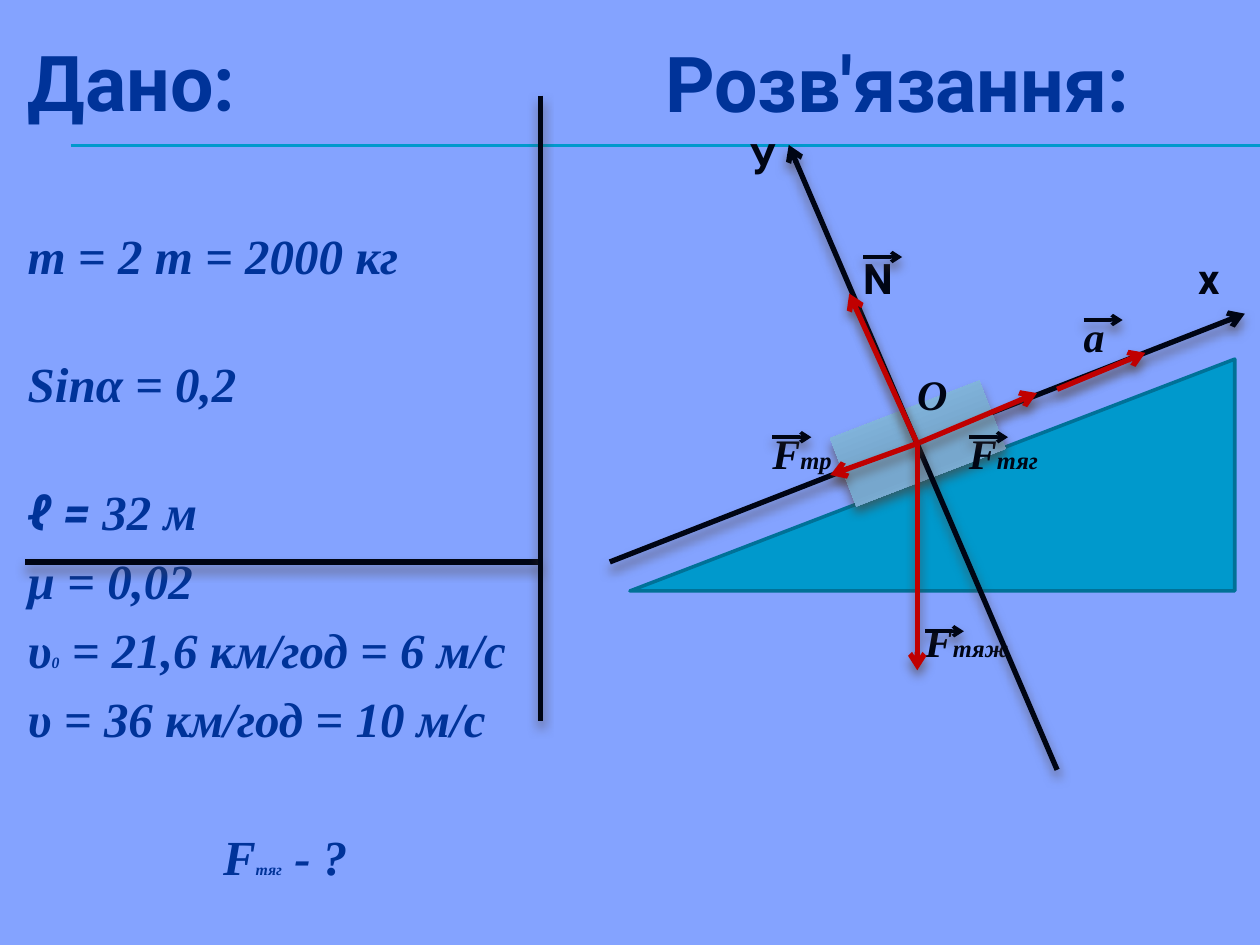
import dataclasses

import lxml.etree
import pptx
import pptx.dml.color
import pptx.enum.shapes
import pptx.oxml
import pptx.oxml.ns
import pptx.util

SHAPE = pptx.enum.shapes.MSO_SHAPE
qn = pptx.oxml.ns.qn


@dataclasses.dataclass(frozen=True)
class Theme:
    """Colours, fonts and type sizes."""
    back: str = "84A3FF"
    ink: str = "000514"
    text: str = "003399"
    teal: str = "0099CC"
    edge: str = "007197"
    force: str = "C00000"
    shade: str = "4E3B30"
    block: tuple = ((0, "A0CDF1"), (25, "82B5DD"), (50, "77A7CD"),
                    (65, "77A7CD"), (80, "81B4DC"), (100, "99C6EB"))
    sans: str = "Roboto"
    serif: str = "Times New Roman"
    title: int = 44
    body: int = 28
    label: int = 24
    sub: int = 14
    tiny: int = 9


@dataclasses.dataclass(frozen=True)
class Box:
    """A region on a grid of 100 columns and 75 rows."""
    x: float
    y: float
    w: float
    h: float

    def at(self, x, y):
        """Return slide lengths for a cell of this region."""
        return cell(self.x + x), cell(self.y + y)


T = Theme()


def cell(n):
    """Turn grid cells into a length."""
    return pptx.util.Inches(n / 10)


def rgb(code):
    """Turn a hex code into a colour."""
    return pptx.dml.color.RGBColor.from_string(code)


def shadow(shape):
    """Add the soft shadow that falls straight down."""
    shape._element.spPr.append(pptx.oxml.parse_xml(
        f'<a:effectLst {pptx.oxml.ns.nsdecls("a")}>'
        '<a:outerShdw blurRad="76200" dist="50800" dir="5400000" rotWithShape="0">'
        f'<a:srgbClr val="{T.shade}"><a:alpha val="60000"/></a:srgbClr>'
        '</a:outerShdw></a:effectLst>'))


def line(slide, box, start, end, color=T.ink, width=3, arrow=False, shade=True):
    """Draw a straight line between two cells of a region."""
    kind = pptx.enum.shapes.MSO_CONNECTOR.STRAIGHT
    item = slide.shapes.add_connector(kind, *box.at(*start), *box.at(*end))
    item.line.color.rgb = rgb(color)
    item.line.width = pptx.util.Pt(width)
    if arrow:
        lxml.etree.SubElement(item.line._ln, qn("a:tailEnd"), type="arrow")
    if shade:
        shadow(item)
    else:
        lxml.etree.SubElement(item._element.spPr, qn("a:effectLst"))


def frame(slide, box, x, y, w, h):
    """Add a text box without insets and return its frame."""
    area = slide.shapes.add_textbox(*box.at(x, y), cell(w), cell(h)).text_frame
    area.word_wrap = True
    area.margin_left = area.margin_right = area.margin_top = area.margin_bottom = 0
    return area


def write(para, runs, color, high, gap=0):
    """Fill a paragraph with runs of text, size, font and slant."""
    para.line_spacing = pptx.util.Pt(high)
    para.space_before = pptx.util.Pt(gap)
    for text, size, face, slant in runs:
        run = para.add_run()
        run.text = text
        run.font.size = pptx.util.Pt(size)
        run.font.name = face
        run.font.bold = True
        run.font.italic = slant
        run.font.color.rgb = rgb(color)


def label(slide, box, x, base, runs, color=T.ink, w=8):
    """Set one line of text on a baseline."""
    size, face = runs[0][1:3]
    high = size * 1.22
    drop = size * (0.24 if face == T.sans else 0.22)
    area = frame(slide, box, x, base - (high - drop) / 7.2, w, high / 7.2)
    write(area.paragraphs[0], runs, color, high)


def rule(slide, box):
    """Draw the double rule under the headings."""
    for y in (0, 0.1):
        line(slide, box, (0, y), (box.w, y), T.teal, 0.75, shade=False)


def given(slide, box):
    """Write the known values and the lines that bound them."""
    def slant(text, size=T.body, face=T.serif):
        return text, size, face, True

    rows = [
        (0, [("Дано:", T.title, T.sans, False)]),
        (56, [slant("m = 2 т = 2000 кг")]),
        (39, [slant("Sinα = 0,2")]),
        (39, [slant("ℓ = ", face=T.sans), slant("32 м")]),
        (5.4, [slant("μ = 0,02")]),
        (5.4, [slant("υ"), slant("0", T.tiny), slant(" = 21,6 км/год = 6 м/с")]),
        (5.4, [slant("υ = 36 км/год = 10 м/с")]),
        (44.8, [slant("F"), slant("тяг", T.tiny), slant(" - ?")]),
    ]
    area = frame(slide, box, 2.2, 2.6, box.w - 4, box.h - 6)
    for i, (gap, runs) in enumerate(rows):
        para = area.add_paragraph() if i else area.paragraphs[0]
        write(para, runs, T.text, 34 if i else 54, gap)
    para._p.get_or_add_pPr().set("marL", str(cell(15.5)))
    line(slide, box, (2, 44.6), (box.w, 44.6))
    line(slide, box, (box.w, 7.6), (box.w, 57.2))


def incline(slide, box):
    """Draw the slope and the block that rests on it."""
    slope = slide.shapes.add_shape(
        SHAPE.RIGHT_TRIANGLE, *box.at(19.8, 13.7), cell(18.4), cell(48))
    slope.rotation = 270
    slope.shadow.inherit = False
    slope.fill.solid()
    slope.fill.fore_color.rgb = rgb(T.teal)
    slope.line.color.rgb = rgb(T.edge)
    slope.line.width = pptx.util.Pt(2)

    block = slide.shapes.add_shape(
        SHAPE.RECTANGLE, *box.at(21.5, 32.3), cell(12.7), cell(5.8))
    block.rotation = 338.9
    block.fill.gradient()
    block.fill.gradient_angle = 270
    stops = block._element.spPr.find(".//" + qn("a:gsLst"))
    for old in list(stops):
        stops.remove(old)
    for place, color in T.block:
        stop = lxml.etree.SubElement(stops, qn("a:gs"), pos=str(place * 1000))
        lxml.etree.SubElement(stop, qn("a:srgbClr"), val=color)
    block.line.fill.background()
    shadow(block)


def names(slide, box):
    """Name the axes and the vectors, with a bar over each vector."""
    marks = [
        ("У", "", 14.5, 13.7, None, T.sans),
        ("N", "", 23.5, 23.2, 20.4, T.sans),
        ("х", "", 50.1, 23.2, None, T.sans),
        ("а", "", 41, 27.9, 25.4, T.serif),
        ("О", "", 27.8, 32.5, None, T.serif),
        ("F", "тр", 16.3, 37.2, 34.7, T.serif),
        ("F", "тяг", 31.9, 37.2, 34.7, T.serif),
        ("F", "тяж", 28.4, 52.1, 50.1, T.serif),
    ]
    for text, sub, x, base, bar, face in marks:
        slant = face == T.serif
        runs = [(text, T.label, face, slant)]
        if sub:
            runs.append((sub, T.sub, face, slant))
        label(slide, box, x, base, runs, w=min(8, box.w - x))
        if bar:
            line(slide, box, (x, bar), (x + 3.1, bar), width=2, arrow=True)


def solution(slide, box):
    """Draw the diagram of forces under its heading."""
    core = (27.8, 35.2)
    line(slide, box, (3.4, 44.6), (53.8, 24.9), arrow=True)
    incline(slide, box)
    label(slide, box, 7.8, 8.65,
          [("Розв'язання:", T.title, T.sans, False)], T.text, 45)
    names(slide, box)
    line(slide, box, (38.9, 61.1), (17.6, 11.5), arrow=True)
    for tip in ((37.3, 31.2), (22.4, 23.3), (20.9, 37.7), (27.8, 53.2)):
        line(slide, box, core, tip, T.force, arrow=True)
    line(slide, box, (38.9, 30.9), (45.9, 28), T.force, arrow=True)


def main():
    """Build the slide and save it."""
    deck = pptx.Presentation()
    deck.slide_width, deck.slide_height = cell(100), cell(75)
    slide = deck.slides.add_slide(deck.slide_layouts[6])
    slide.background.fill.solid()
    slide.background.fill.fore_color.rgb = rgb(T.back)
    rule(slide, Box(5.6, 11.5, 94.4, 1))
    given(slide, Box(0, 0, 42.9, 75))
    solution(slide, Box(45, 0, 55, 75))
    deck.save("out.pptx")


if __name__ == "__main__":
    main()
